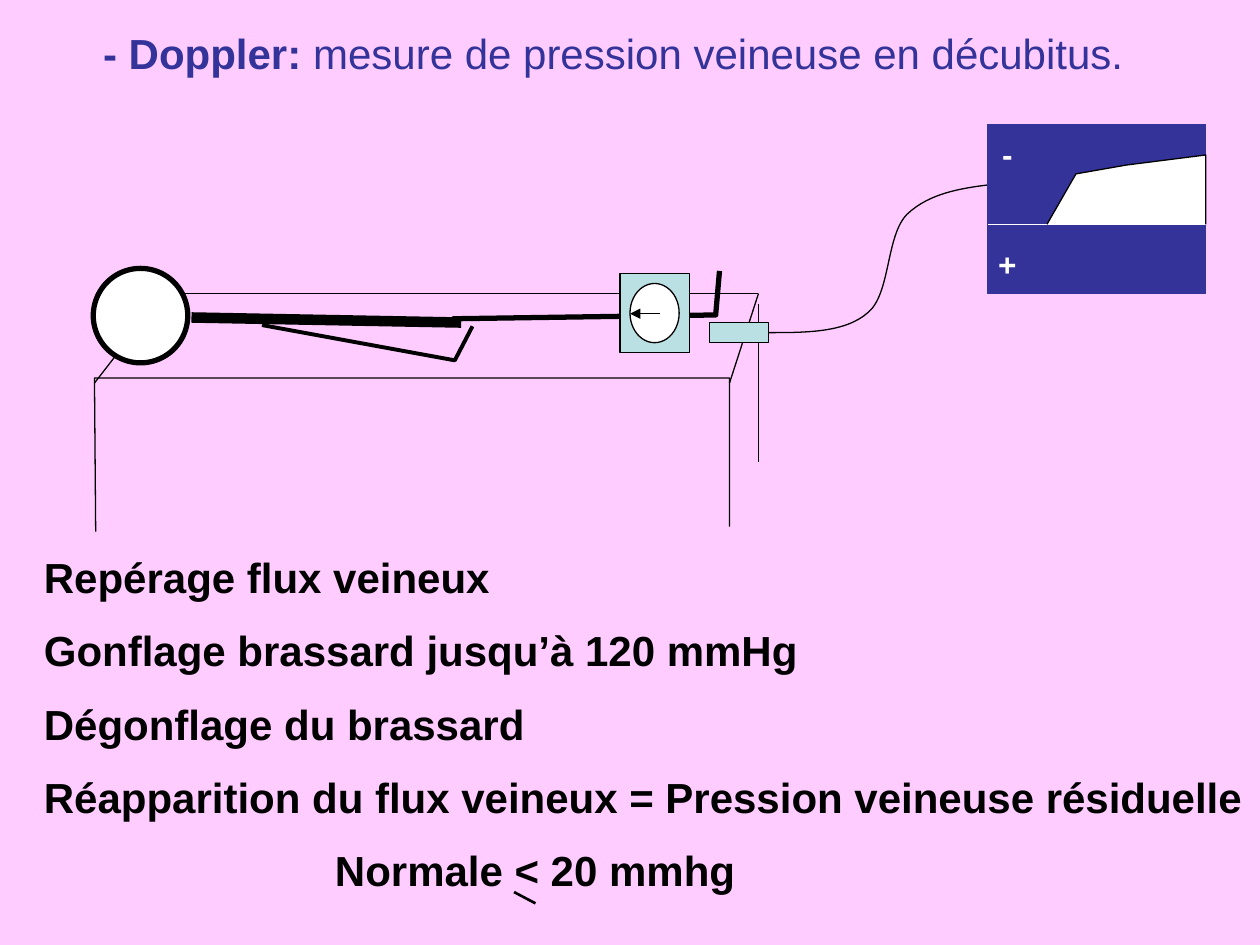
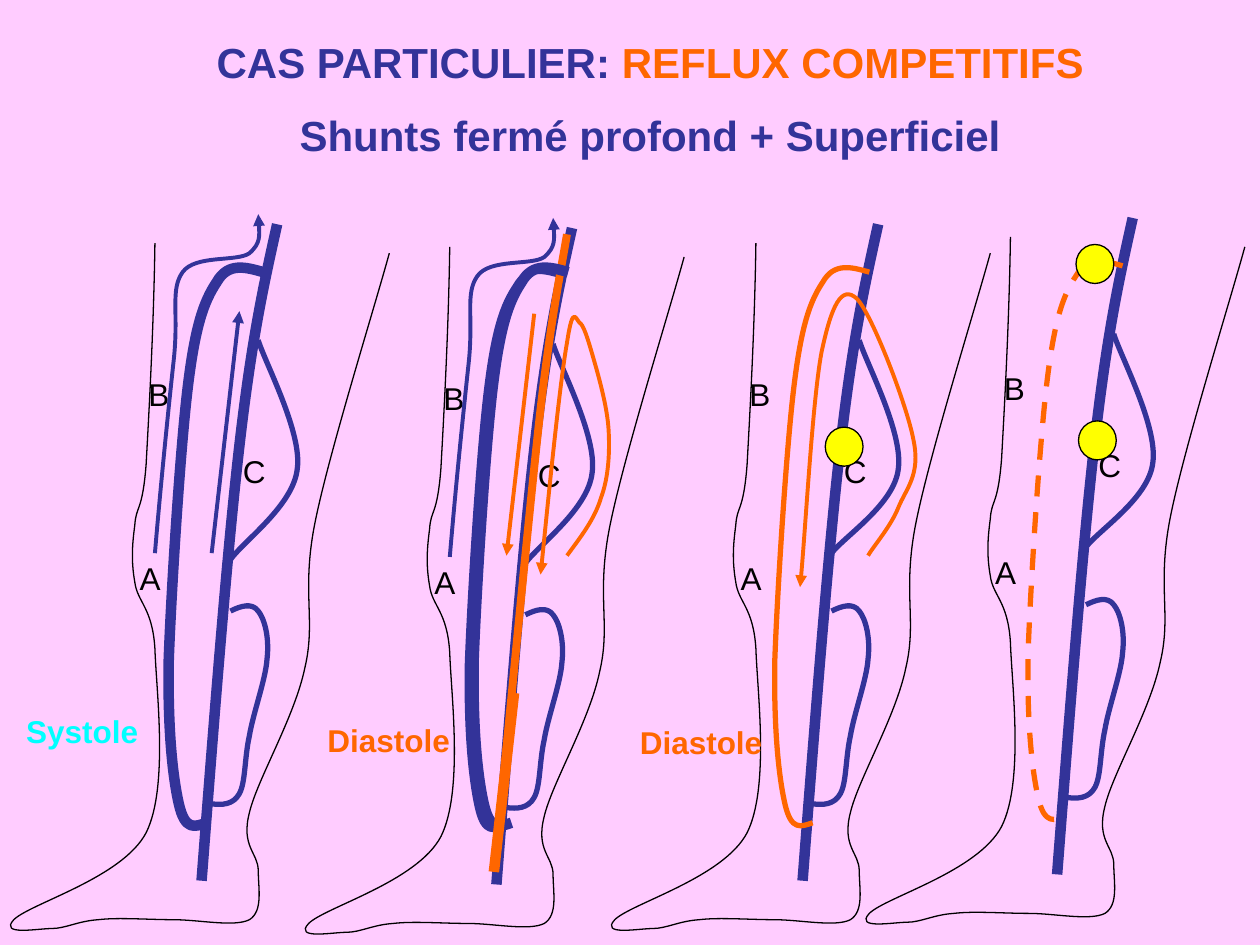
from dataclasses import dataclass, replace
from typing import Optional, Union

from lxml.etree import SubElement
from pptx import Presentation
from pptx.dml.color import RGBColor
from pptx.enum.dml import MSO_LINE as Dash
from pptx.enum.shapes import MSO_CONNECTOR as Connector, MSO_SHAPE as Preset
from pptx.enum.text import MSO_ANCHOR as Anchor, PP_ALIGN as Align
from pptx.oxml.ns import qn
from pptx.util import Emu, Inches, Pt

# Colours
PINK = RGBColor(0xFF, 0xCC, 0xFF)
NAVY = RGBColor(0x33, 0x33, 0x99)
ORANGE = RGBColor(0xFF, 0x66, 0x00)
CYAN = RGBColor(0x00, 0xFF, 0xFF)
YELLOW = RGBColor(0xFF, 0xFF, 0x00)
PALE_TEAL = RGBColor(0xBB, 0xE0, 0xE3)
WHITE = RGBColor(0xFF, 0xFF, 0xFF)
BLACK = RGBColor(0x00, 0x00, 0x00)

# Grid: 1000 columns by 750 rows of square cells
WIDTH, HEIGHT = Inches(10), Inches(7.5)
COL, ROW = WIDTH // 1000, HEIGHT // 750

# Text formats
HEADING = {"name": "Arial", "size": Pt(24), "bold": True}
PHASE = HEADING | {"size": Pt(18)}
LETTER = PHASE | {"bold": False}

Point = tuple[int, int]
Cell = tuple[int, int, int, int]


@dataclass(frozen=True)
class Stroke:
    points: tuple[Point, ...]
    color: RGBColor = BLACK
    weight: float = 0.75
    curved: bool = False  # start point, then triples of Bezier points
    arrow: bool = False
    dashed: bool = False
    fill: Optional[RGBColor] = None


@dataclass(frozen=True)
class Block:
    cell: Cell
    preset: Preset = Preset.RECTANGLE
    fill: Optional[RGBColor] = None
    line: Optional[RGBColor] = BLACK
    weight: float = 0.75
    sign: str = ""


@dataclass(frozen=True)
class Run:
    text: str
    color: RGBColor = BLACK
    bold: bool = True


@dataclass(frozen=True)
class Para:
    runs: tuple[Run, ...]
    indent: int = 0


def curve(*points: Point, **look) -> Stroke:
    return Stroke(points, curved=True, **look)


def line(*points: Point, **look) -> Stroke:
    return Stroke(points, **look)


def shifted(stroke: Stroke, dx: int, dy: int) -> Stroke:
    return replace(stroke, points=tuple((x + dx, y + dy) for x, y in stroke.points))


def bend(freeform) -> None:
    """Turn each three straight segments into one cubic Bezier segment."""
    segments = list(freeform._element.iter(qn("a:lnTo")))
    for start in range(0, len(segments), 3):
        cubic = SubElement(segments[start].getparent(), qn("a:cubicBezTo"))
        for segment in segments[start:start + 3]:
            cubic.append(segment[0])
            segment.getparent().remove(segment)


def paint(target, color: Optional[RGBColor]) -> None:
    if color is None:
        target.background()
    else:
        target.solid()
        target.fore_color.rgb = color


def draw_stroke(slide, stroke: Stroke) -> None:
    places = [(Emu(x * COL), Emu(y * ROW)) for x, y in stroke.points]
    if len(places) == 2:
        drawn = slide.shapes.add_connector(Connector.STRAIGHT, *places[0], *places[1])
        SubElement(drawn._element.spPr, qn("a:effectLst"))
    else:
        builder = slide.shapes.build_freeform(*places[0])
        builder.add_line_segments(places[1:], close=False)
        drawn = builder.convert_to_shape()
        drawn.shadow.inherit = False
        paint(drawn.fill, stroke.fill)
    if stroke.curved:
        bend(drawn)
    paint(drawn.line.fill, stroke.color)
    drawn.line.width = Pt(stroke.weight)
    if stroke.dashed:
        drawn.line.dash_style = Dash.DASH
    if stroke.arrow:
        SubElement(drawn.line._get_or_add_ln(), qn("a:tailEnd"), type="triangle")


def add_run(paragraph, run: Run, style: dict) -> None:
    part = paragraph.add_run()
    part.text = run.text
    for key, value in (style | {"bold": style["bold"] and run.bold}).items():
        setattr(part.font, key, value)
    part.font.color.rgb = run.color


def draw_block(slide, block: Block) -> None:
    left, top, width, height = block.cell
    drawn = slide.shapes.add_shape(block.preset, left * COL, top * ROW, width * COL, height * ROW)
    drawn.shadow.inherit = False
    paint(drawn.fill, block.fill)
    paint(drawn.line.fill, block.line)
    if block.line is not None:
        drawn.line.width = Pt(block.weight)
    if block.sign:
        frame = drawn.text_frame
        frame.word_wrap = False
        frame.vertical_anchor = Anchor.MIDDLE
        frame.paragraphs[0].alignment = Align.CENTER
        add_run(frame.paragraphs[0], Run(block.sign, WHITE), PHASE)


def draw_all(slide, parts: list[Union[Stroke, Block]]) -> None:
    for part in parts:
        (draw_stroke if isinstance(part, Stroke) else draw_block)(slide, part)


def write(slide, cell: Cell, paras: list[Para], style: dict = HEADING,
          align: Align = Align.LEFT) -> None:
    left, top, width, height = cell
    frame = slide.shapes.add_textbox(left * COL, top * ROW, width * COL, height * ROW).text_frame
    frame.word_wrap = True
    for index, para in enumerate(paras):
        paragraph = frame.add_paragraph() if index else frame.paragraphs[0]
        paragraph.alignment = align
        if index:
            paragraph.space_before = Pt(13)
        if para.indent:
            paragraph._p.get_or_add_pPr().set("marL", str(para.indent * COL))
        for run in para.runs:
            add_run(paragraph, run, style)


def new_slide(deck):
    slide = deck.slides.add_slide(deck.slide_layouts[6])
    paint(slide.background.fill, PINK)
    return slide


# Slide 1: patient on a table, cuff, probe and screen
TABLE = [
    line((602, 241), (602, 367)),
    line((602, 233), (138, 233)),
    line((75, 304), (130, 233)),
    line((602, 233), (579, 304)),
    line((76, 422), (75, 300), (579, 300), (579, 418)),
]
PATIENT = [
    Block((74, 213, 75, 75), Preset.OVAL, WHITE, weight=3),
    line((152, 252), (366, 256), weight=6),
    line((359, 253), (568, 250), (571, 215), weight=3),
    line((208, 258), (361, 286), (375, 259), weight=2.25),
]
CUFF_AND_PROBE = [
    Block((492, 217, 55, 63), fill=PALE_TEAL),
    Block((500, 225, 39, 47), Preset.OVAL, WHITE),
    line((524, 249), (500, 249), arrow=True),
    curve((610, 264), (640, 264), (671, 264), (689, 248), (707, 233), (703, 187),
          (720, 170), (738, 153), (764, 149), (791, 146)),
    Block((563, 256, 47, 16), fill=PALE_TEAL),
]
SCREEN = [
    Block((784, 99, 173, 134), fill=NAVY, line=NAVY),
    line((784, 178), (957, 178), color=WHITE),
    Block((776, 107, 47, 31), Preset.OVAL, line=None, sign="-"),
    Block((768, 186, 63, 47), Preset.OVAL, line=None, sign="+"),
    line((831, 178), (854, 138), (894, 131), (957, 123), (957, 178), fill=WHITE),
]
STEPS = ["Repérage flux veineux", "Gonflage brassard jusqu’à 120 mmHg", "Dégonflage du brassard",
         "Réapparition du flux veineux = Pression veineuse résiduelle"]


def pressure_slide(deck) -> None:
    slide = new_slide(deck)
    write(slide, (72, 17, 890, 110), [Para((
        Run("- Doppler: ", NAVY),
        Run("mesure de pression veineuse en décubitus.", NAVY, bold=False)))])
    draw_all(slide, TABLE + PATIENT + CUFF_AND_PROBE + SCREEN)
    normal = Para((Run("Normale < 20 mmhg"),), indent=231)
    write(slide, (25, 433, 975, 290), [Para((Run(step),)) for step in STEPS] + [normal])
    draw_stroke(slide, line((408, 708), (425, 717), weight=1.5))


# Slide 2: anatomy of one leg, placed at the first position
SKIN = curve(
    (123, 193), (122, 262), (118, 332), (116, 369), (113, 407), (108, 401), (107, 417),
    (105, 432), (104, 445), (107, 462), (109, 478), (121, 482), (123, 515),
    (124, 548), (134, 625), (116, 661), (97, 697), (24, 717), (11, 730),
    (-1, 743), (30, 737), (41, 737), (52, 737), (62, 731), (78, 730),
    (94, 728), (118, 730), (138, 730), (158, 730), (186, 736), (198, 730),
    (209, 723), (205, 705), (205, 691), (205, 677), (191, 672), (198, 645),
    (204, 619), (234, 569), (242, 530), (251, 492), (239, 470), (250, 415),
    (261, 360), (297, 245), (309, 201))
DEEP_VEIN = curve((220, 178), (210, 223), (200, 267), (190, 354), (180, 441), (170, 570),
                  (160, 699), color=NAVY, weight=6)
SAPHENOUS = curve(
    (209, 216), (195, 212), (181, 208), (172, 224), (162, 239), (155, 258), (149, 308),
    (143, 358), (136, 468), (134, 523), (133, 578), (137, 616), (142, 638),
    (147, 660), (155, 656), (164, 653), color=NAVY, weight=6)
CALF_LOOP = curve(
    (183, 485), (191, 481), (200, 478), (205, 485), (210, 491), (214, 506), (212, 523),
    (211, 539), (201, 566), (198, 584), (194, 602), (195, 621), (190, 630),
    (185, 639), (176, 639), (168, 638), color=NAVY, weight=3)
THIGH_LOOP = curve((205, 270), (210, 287), (240, 343), (236, 372), (233, 401), (194, 429),
                   (183, 444), color=NAVY, weight=3)
SHORT_THIGH_LOOP = replace(THIGH_LOOP, points=THIGH_LOOP.points[:4] + (
    (233, 400), (194, 425), (183, 439)))
RISING_FLOW = curve(
    (123, 439), (128, 380), (134, 322), (138, 285), (142, 248), (135, 230), (145, 216),
    (155, 202), (188, 208), (198, 201), (207, 193), (206, 182), (205, 170),
    color=NAVY, weight=2.25, arrow=True)
LETTERS = {"C": (183, 354), "B": (108, 293), "A": (101, 439)}

# Flows found in one leg only, in slide cells
FLOW = {"color": ORANGE, "weight": 2.25, "arrow": True}
DEEP_REFLUX = [
    line((424, 249), (402, 441), **FLOW),
    curve((450, 186), (446, 211), (437, 253), (428, 334), (419, 416), (401, 605), (394, 676),
          color=ORANGE, weight=4.5),
    curve((450, 441), (461, 426), (472, 412), (477, 395), (483, 379), (484, 359), (483, 341),
          (482, 324), (476, 302), (472, 288), (468, 274), (464, 260), (461, 257),
          (457, 255), (455, 239), (450, 272), (444, 305), (433, 418), (429, 456), **FLOW),
    shifted(SAPHENOUS, 242, 0),
    line((408, 550), (392, 692), color=ORANGE, weight=6),
]
LOOP_REFLUX = curve(
    (689, 441), (693, 434), (707, 418), (713, 403), (719, 388), (731, 377), (725, 349),
    (720, 322), (692, 249), (680, 237), (668, 226), (660, 242), (652, 280),
    (645, 318), (639, 427), (635, 466), **FLOW)


def stop(left: int, top: int) -> Block:
    return Block((left, top, 30, 31), Preset.OVAL, YELLOW)


@dataclass(frozen=True)
class Leg:
    shift: tuple[int, int]
    saphenous: Stroke
    thigh_loop: Stroke
    extras: list
    phase: Optional[Run] = None
    phase_at: tuple[int, int] = (0, 0)


REFLUXING = replace(SAPHENOUS, color=ORANGE, weight=3)
LEGS = [
    Leg((0, 0), SAPHENOUS, THIGH_LOOP,
        [line((168, 439), (190, 247), color=NAVY, weight=2.25, arrow=True), RISING_FLOW],
        Run("Systole", CYAN), (11, 560)),
    Leg((234, 3), shifted(replace(SAPHENOUS, weight=3), 3, 0), THIGH_LOOP,
        [shifted(RISING_FLOW, 234, 3)] + DEEP_REFLUX, Run("Diastole", ORANGE), (250, 567)),
    Leg((477, 0), shifted(REFLUXING, 4, 0), SHORT_THIGH_LOOP,
        [stop(655, 339), LOOP_REFLUX], Run("Diastole", ORANGE), (498, 569)),
    Leg((679, -5), shifted(replace(REFLUXING, dashed=True), 3, 0), SHORT_THIGH_LOOP,
        [stop(856, 334), stop(854, 194)]),
]


def draw_leg(slide, leg: Leg) -> None:
    dx, dy = leg.shift
    anatomy = [SKIN, DEEP_VEIN, leg.saphenous, leg.thigh_loop, CALF_LOOP]
    draw_all(slide, [shifted(part, dx, dy) for part in anatomy])
    for letter, (x, y) in LETTERS.items():
        write(slide, (x + dx, y + dy, 37, 40), [Para((Run(letter),))], LETTER)
    draw_all(slide, leg.extras)
    if leg.phase:
        write(slide, (*leg.phase_at, 224, 40), [Para((leg.phase,))], PHASE)


def reflux_slide(deck) -> None:
    slide = new_slide(deck)
    write(slide, (130, 24, 772, 110), [
        Para((Run("CAS PARTICULIER: ", NAVY), Run("REFLUX COMPETITIFS", ORANGE))),
        Para((Run("Shunts fermé profond + Superficiel", NAVY),))], align=Align.CENTER)
    for leg in LEGS:
        draw_leg(slide, leg)


def main() -> None:
    deck = Presentation()
    deck.slide_width, deck.slide_height = WIDTH, HEIGHT
    pressure_slide(deck)
    reflux_slide(deck)
    deck.save("out.pptx")


if __name__ == "__main__":
    main()
